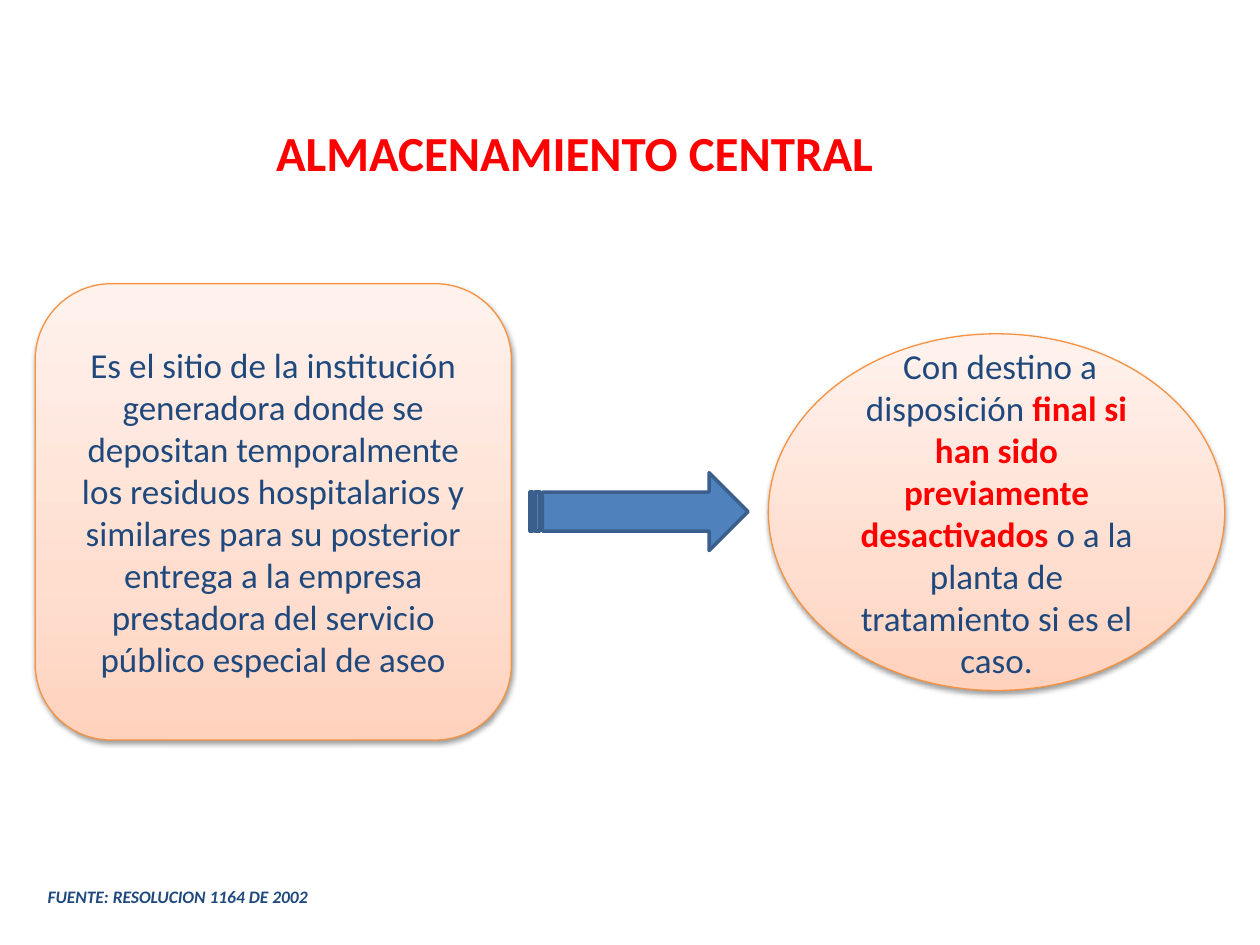
from lxml import etree
from pptx import Presentation
from pptx.dml.color import RGBColor
from pptx.enum.shapes import MSO_SHAPE
from pptx.enum.text import MSO_ANCHOR, MSO_AUTO_SIZE, PP_ALIGN
from pptx.oxml import parse_xml
from pptx.oxml.ns import nsdecls
from pptx.util import Cm, Pt

ROUNDED = MSO_SHAPE.ROUNDED_RECTANGLE
ELLIPSE = MSO_SHAPE.OVAL
STRIPED_ARROW = MSO_SHAPE.STRIPED_RIGHT_ARROW
TOP, MIDDLE = MSO_ANCHOR.TOP, MSO_ANCHOR.MIDDLE
LEFT, CENTER = PP_ALIGN.LEFT, PP_ALIGN.CENTER
FIT_SHAPE, NO_FIT = MSO_AUTO_SIZE.SHAPE_TO_FIT_TEXT, MSO_AUTO_SIZE.NONE

COLORS = {
    "red": "FF0000",
    "navy": "1F497D",
    "black": "000000",
    "orange": "F69240",
    "blue": "4F81BD",
    "blue_edge": "3A5F8C",
}
PEACH_STOPS = [(0, "FFD2BD"), (35, "FFDED0"), (100, "FFF2ED")]


def style_span(span, size, color, bold=False, italic=False):
    font = span.font
    font.name, font.size = "Calibri", Pt(size)
    font.bold, font.italic = bold, italic
    font.color.rgb = RGBColor.from_string(COLORS[color])


def add_peach_fill_and_shadow(shape):
    """Fill with a three-stop gradient, darkest at the bottom, over a soft shadow."""
    stops = "".join(
        f'<a:gs pos="{place * 1000}"><a:srgbClr val="{color}"/></a:gs>'
        for place, color in PEACH_STOPS
    )
    gradient = parse_xml(
        f'<a:gradFill {nsdecls("a")} rotWithShape="1"><a:gsLst>{stops}</a:gsLst>'
        '<a:lin ang="16200000" scaled="1"/></a:gradFill>'
    )
    shadow = parse_xml(
        f'<a:outerShdw {nsdecls("a")} blurRad="40000" dist="20000" dir="5400000" '
        'rotWithShape="0"><a:srgbClr val="000000"><a:alpha val="38000"/></a:srgbClr>'
        '</a:outerShdw>'
    )
    properties = shape.element.spPr
    properties.find("{*}prstGeom").addnext(gradient)
    shape.shadow.inherit = False
    effects = properties.find("{*}effectLst")
    etree.ElementBase.append(effects, shadow)


deck = Presentation()
deck.slide_width, deck.slide_height = Cm(25.4), Cm(19.05)
page = deck.slides.add_slide(deck.slide_layouts[5])

# Title
title = page.shapes.title
title.left, title.top, title.width, title.height = Cm(5.31), Cm(2.34), Cm(12.7), Cm(1.45)
frame = title.text_frame
frame.text = "ALMACENAMIENTO CENTRAL"
frame.word_wrap = False
frame.auto_size = FIT_SHAPE
frame.vertical_anchor = TOP
frame.paragraphs[0].alignment = LEFT
style_span(frame.paragraphs[0].runs[0], 28, "red", bold=True)

# Definition and destination: (text, size, colour, bold) for each run
definition = [
    ("Es el sitio de la institución generadora donde se depositan temporalmente "
     "los residuos hospitalarios y similares para su posterior entrega a la empresa "
     "prestadora del servicio público especial de aseo", 20, "navy", False),
]
destination = [
    (" ", 18, "black", False),
    ("Con destino a disposición ", 20, "navy", False),
    ("final si han sido previamente desactivados", 20, "red", True),
    (" o a la planta de tratamiento si es el caso.", 20, "navy", False),
]
panels = [
    (ROUNDED, 0.71, 5.72, 9.6, 9.2, definition),
    (ELLIPSE, 15.49, 6.73, 9.2, 7.19, destination),
]
for kind, left, top, width, height, spans in panels:
    panel = page.shapes.add_shape(kind, Cm(left), Cm(top), Cm(width), Cm(height))
    add_peach_fill_and_shadow(panel)
    panel.line.color.rgb = RGBColor.from_string(COLORS["orange"])
    panel.line.width = Pt(0.75)
    frame = panel.text_frame
    frame.word_wrap = True
    frame.auto_size = NO_FIT
    frame.vertical_anchor = MIDDLE
    para = frame.paragraphs[0]
    para.alignment = CENTER
    for text, size, color, bold in spans:
        span = para.add_run()
        span.text = text
        style_span(span, size, color, bold)

# Arrow from definition to destination
arrow = page.shapes.add_shape(STRIPED_ARROW, Cm(10.69), Cm(9.53), Cm(4.39), Cm(1.57))
arrow.shadow.inherit = False
arrow.fill.solid()
arrow.fill.fore_color.rgb = RGBColor.from_string(COLORS["blue"])
arrow.line.color.rgb = RGBColor.from_string(COLORS["blue_edge"])
arrow.line.width = Pt(2)

# Reference line
reference = page.shapes.add_textbox(Cm(0.71), Cm(17.73), Cm(12.7), Cm(0.69))
frame = reference.text_frame
frame.text = "FUENTE: RESOLUCION 1164 DE 2002"
frame.word_wrap = True
frame.auto_size = FIT_SHAPE
style_span(frame.paragraphs[0].runs[0], 10, "navy", bold=True, italic=True)

deck.save("out.pptx")
